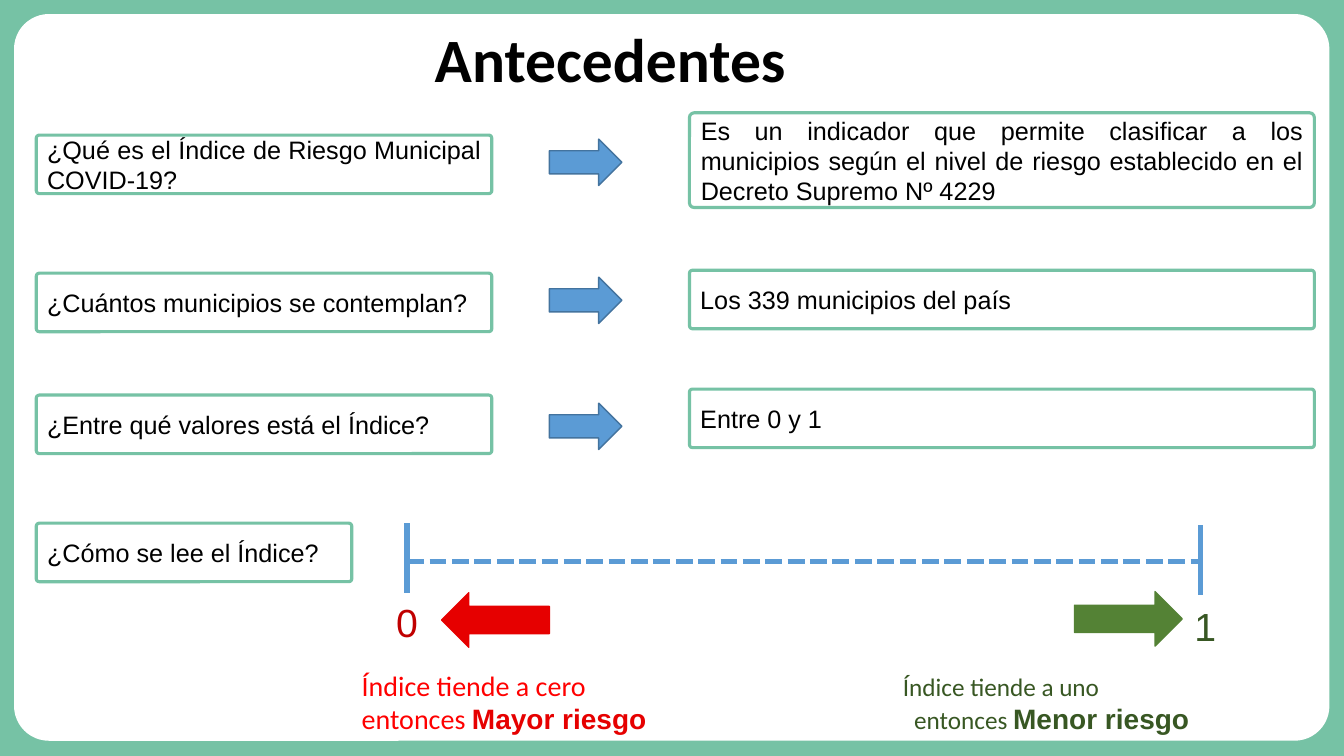
import pptx
import pptx.dml.color
import pptx.enum.dml
import pptx.enum.shapes
import pptx.enum.text
import pptx.oxml.ns
import pptx.util
import lxml.etree

Pt = pptx.util.Pt
RGBColor = pptx.dml.color.RGBColor
Shape = pptx.enum.shapes.MSO_SHAPE
Align = pptx.enum.text.PP_ALIGN
Anchor = pptx.enum.text.MSO_ANCHOR

MINT = RGBColor(0x76, 0xC2, 0xA5)
WHITE = RGBColor(0xFF, 0xFF, 0xFF)
BLACK = RGBColor(0x00, 0x00, 0x00)
BLUE = RGBColor(0x5B, 0x9B, 0xD5)
DARK_BLUE = RGBColor(0x43, 0x73, 0x9E)
RED = RGBColor(0xE6, 0x00, 0x00)
BRIGHT_RED = RGBColor(0xFF, 0x00, 0x00)
DARK_RED = RGBColor(0xC0, 0x00, 0x00)
GREEN = RGBColor(0x54, 0x82, 0x35)
DARK_GREEN = RGBColor(0x38, 0x57, 0x23)

deck = pptx.Presentation()
deck.slide_width = Pt(960)
deck.slide_height = Pt(540)
page = deck.slides.add_slide(deck.slide_layouts[5])
page.background.fill.solid()
page.background.fill.fore_color.rgb = MINT


def add_shape(kind, left, top, width, height, fill, line, weight):
    """Add a preset shape without shadow; None leaves fill or line out."""
    shape = page.shapes.add_shape(kind, Pt(left), Pt(top), Pt(width), Pt(height))
    shape.shadow.inherit = False
    for part, colour in ((shape.fill, fill), (shape.line.fill, line)):
        if colour is None:
            part.background()
        else:
            part.solid()
            part.fore_color.rgb = colour
    if line is not None:
        shape.line.width = Pt(weight)
    return shape


def style_run(span, font, size, colour, bold=False):
    span.font.name = font
    span.font.size = Pt(size)
    span.font.color.rgb = colour
    span.font.bold = bold


# White panel, sent behind the title
panel = add_shape(Shape.ROUNDED_RECTANGLE, 10, 10, 939.6, 519.1, WHITE, None, 0)
panel.adjustments[0] = 0.048
page.shapes.element.insert(2, panel.element)

title = page.shapes.title
title.left, title.top, title.width, title.height = Pt(0), Pt(27.4), Pt(872), Pt(34.6)
title.text_frame.text = "Antecedentes"
title.text_frame.vertical_anchor = Anchor.MIDDLE
title_para = title.text_frame.paragraphs[0]
title_para.alignment = Align.CENTER
title_para.line_spacing = 0.9
style_run(title_para.runs[0], "Calibri", 44, BLACK, True)

# Questions and answers
QUESTION_LEFT, QUESTION_WIDTH = 25.9, 325.4
ANSWER_LEFT, ANSWER_WIDTH = 492.5, 446.4
BOX_HEIGHT = 41.8
framed_texts = [
    (QUESTION_LEFT, 96.5, QUESTION_WIDTH, BOX_HEIGHT,
     "¿Qué es el Índice de Riesgo Municipal COVID-19?"),
    (ANSWER_LEFT, 80.6, ANSWER_WIDTH, 67.7,
     "Es un indicador que permite clasificar a los municipios según el nivel "
     "de riesgo establecido en el Decreto Supremo Nº 4229"),
    (QUESTION_LEFT, 195.1, QUESTION_WIDTH, BOX_HEIGHT,
     "¿Cuántos municipios se contemplan?"),
    (ANSWER_LEFT, 193, ANSWER_WIDTH, BOX_HEIGHT, "Los 339 municipios del país"),
    (QUESTION_LEFT, 282.2, QUESTION_WIDTH, BOX_HEIGHT,
     "¿Entre qué valores está el Índice?"),
    (ANSWER_LEFT, 277.9, ANSWER_WIDTH, BOX_HEIGHT, "Entre 0 y 1"),
    (QUESTION_LEFT, 373.7, 225.4, BOX_HEIGHT, "¿Cómo se lee el Índice?"),
]
for left, top, width, height, text in framed_texts:
    box = add_shape(Shape.ROUNDED_RECTANGLE, left, top, width, height, None, MINT, 2.25)
    box.adjustments[0] = 0.051
    box.text_frame.text = text
    box.text_frame.word_wrap = True
    box.text_frame.vertical_anchor = Anchor.MIDDLE
    para = box.text_frame.paragraphs[0]
    para.alignment = Align.JUSTIFY
    style_run(para.runs[0], "Arial", 18, BLACK)

for top in (99.4, 198, 288):
    add_shape(Shape.RIGHT_ARROW, 392.4, top, 51.8, 33.1, BLUE, DARK_BLUE, 1)

# Scale from 0 to 1
ZERO_X, ONE_X, AXIS_Y = 290.9, 857.5, 401
scale_lines = [
    (ZERO_X, AXIS_Y, ONE_X, AXIS_Y, True),
    (ZERO_X, 373.7, ZERO_X, 423.4, False),
    (ONE_X, 375.1, ONE_X, 424.8, False),
]
for start_x, start_y, end_x, end_y, dashed in scale_lines:
    line = page.shapes.add_connector(
        pptx.enum.shapes.MSO_CONNECTOR.STRAIGHT,
        Pt(start_x), Pt(start_y), Pt(end_x), Pt(end_y))
    line.line.color.rgb = BLUE
    line.line.width = Pt(4)
    if dashed:
        line.line.dash_style = pptx.enum.dml.MSO_LINE.SQUARE_DOT
    lxml.etree.SubElement(line.element.spPr, pptx.oxml.ns.qn("a:effectLst"))

red_arrow = add_shape(Shape.RIGHT_ARROW, 315.4, 423.4, 77, 38.9, RED, RED, 1)
red_arrow.rotation = 180
add_shape(Shape.RIGHT_ARROW, 767.5, 422.6, 77, 38.9, GREEN, GREEN, 1)

# Scale ends and captions: each paragraph is a list of (text, font, size, colour, bold)
labels = [
    (275.8, 424.1, 30.2, 41, False, [[("0", "Arial", 28, DARK_RED, False)]]),
    (846, 427, 30.2, 41, False, [[("1", "Arial", 28, DARK_GREEN, False)]]),
    (251.3, 473.8, 233.3, 80, True, [
        [("Índice tiende a cero entonces ", "Calibri", 20, BRIGHT_RED, False),
         ("Mayor riesgo", "Arial", 20, RED, True)]]),
    (637.9, 475.9, 233.3, 75, True, [
        [("Índice tiende a uno", "Calibri", 18, DARK_GREEN, False)],
        [("entonces ", "Calibri", 18, DARK_GREEN, False),
         ("Menor riesgo", "Arial", 20, DARK_GREEN, True)]]),
]
for left, top, width, height, wrap, paragraphs in labels:
    box = page.shapes.add_textbox(Pt(left), Pt(top), Pt(width), Pt(height))
    frame = box.text_frame
    frame.word_wrap = wrap
    for number, spans in enumerate(paragraphs):
        para = frame.add_paragraph() if number else frame.paragraphs[0]
        if number:
            para._p.get_or_add_pPr().set("marL", str(Pt(8)))
        for text, font, size, colour, bold in spans:
            span = para.add_run()
            span.text = text
            style_run(span, font, size, colour, bold)

deck.save("out.pptx")
